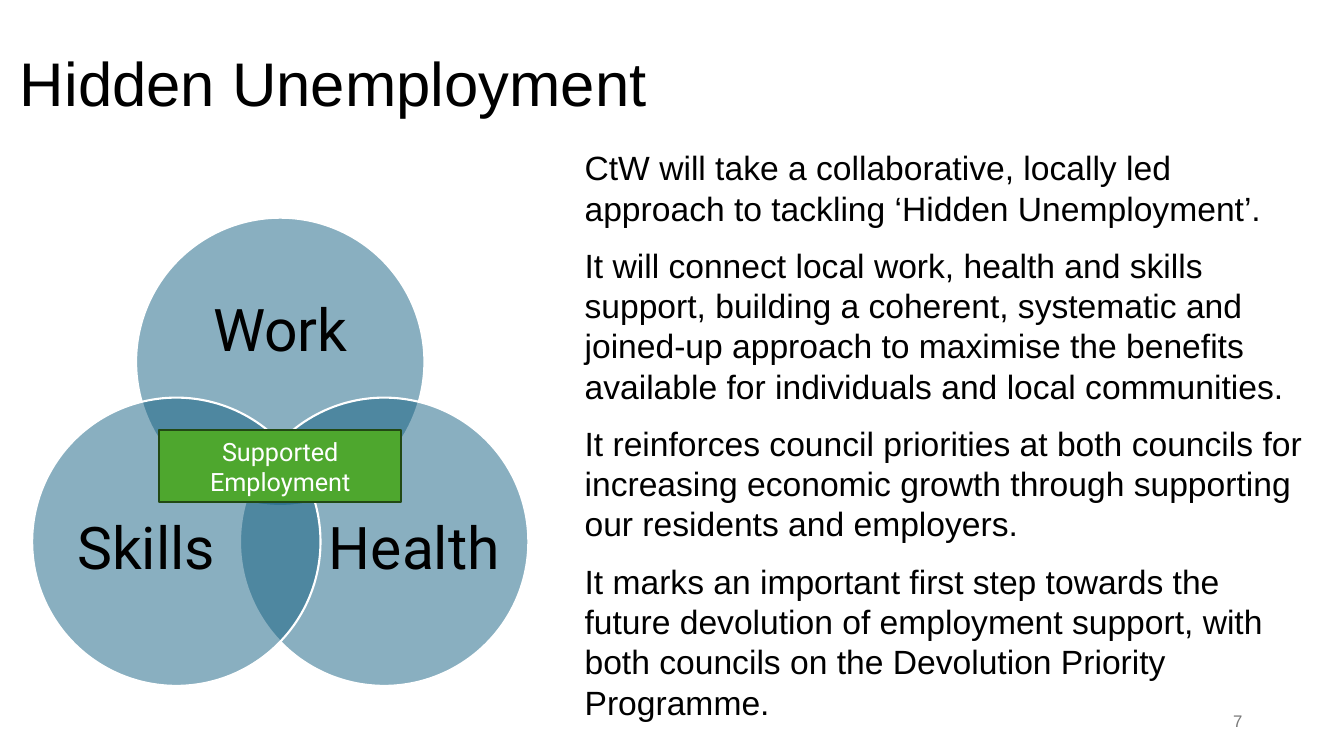
from dataclasses import dataclass
from math import cos, radians, sin

from lxml import etree
from pptx import Presentation
from pptx.dml.color import RGBColor
from pptx.enum.shapes import MSO_SHAPE
from pptx.enum.text import MSO_ANCHOR, PP_ALIGN
from pptx.oxml.ns import qn
from pptx.util import Emu, Inches, Pt

OVAL, RECTANGLE = MSO_SHAPE.OVAL, MSO_SHAPE.RECTANGLE
TOP, MIDDLE = MSO_ANCHOR.TOP, MSO_ANCHOR.MIDDLE
LEFT, CENTER, RIGHT = PP_ALIGN.LEFT, PP_ALIGN.CENTER, PP_ALIGN.RIGHT

# Square grid: ten cells to the inch
SLIDE_WIDTH, SLIDE_HEIGHT = Inches(13.33), Inches(7.5)
ROWS = 75
CELL = SLIDE_HEIGHT / ROWS

BLACK, WHITE, GREY = "000000", "FFFFFF", "797979"
TEAL, GREEN, DARK_GREEN = "156082", "4EA72E", "224914"

# Venn diagram, in grid cells
VENN_COLUMN, VENN_ROW = 27.8, 47.8
ORBIT, DIAMETER = 11.9, 28.6


@dataclass(frozen=True)
class Area:
    column: float
    row: float
    columns: float
    rows: float

    def lengths(self) -> list[Emu]:
        return [Emu(round(n * CELL)) for n in (self.column, self.row, self.columns, self.rows)]


@dataclass(frozen=True)
class TextStyle:
    size: float
    font: str = "Arial"
    color: str = BLACK
    align: PP_ALIGN = LEFT
    anchor: MSO_ANCHOR = MIDDLE
    line_spacing: float = 1.0
    before: float = 0
    after: float = 0
    inset: bool = True


@dataclass(frozen=True)
class Circle:
    label: str
    angle: float
    label_shift: tuple[float, float]
    label_size: tuple[float, float]


TITLE = TextStyle(44, line_spacing=0.9)
BODY = TextStyle(24, anchor=TOP, before=6, after=6)
CIRCLE_LABEL = TextStyle(42, "Roboto", align=CENTER, line_spacing=0.9, inset=False)
BADGE = TextStyle(18, "Roboto", WHITE, CENTER)
PAGE_NUMBER = TextStyle(12, color=GREY, align=RIGHT)

CIRCLES = [
    Circle("Work", -90, (0, -2.9), (20.9, 12.8)),
    Circle("Health", 30, (3, 0.9), (17.1, 15.7)),
    Circle("Skills", 150, (-3, 0.9), (17.1, 15.7)),
]

PARAGRAPHS = [
    "CtW will take a collaborative, locally led approach to tackling ‘Hidden Unemployment’.",
    "It will connect local work, health and skills support, building a coherent, systematic "
    "and joined-up approach to maximise the benefits available for individuals and local "
    "communities.",
    "It reinforces council priorities at both councils for increasing economic growth through "
    "supporting our residents and employers.",
    "It marks an important first step towards the future devolution of employment support, "
    "with both councils on the Devolution Priority Programme.",
]


def rgb(color: str) -> RGBColor:
    return RGBColor.from_string(color)


def centred(column: float, row: float, columns: float, rows: float) -> Area:
    return Area(column - columns / 2, row - rows / 2, columns, rows)


def write(box, texts: list[str], style: TextStyle) -> None:
    frame = box.text_frame
    frame.word_wrap = True
    frame.vertical_anchor = style.anchor
    if not style.inset:
        frame.margin_left = frame.margin_right = frame.margin_top = frame.margin_bottom = 0
    for index, text in enumerate(texts):
        para = frame.add_paragraph() if index else frame.paragraphs[0]
        para.alignment = style.align
        para.line_spacing = style.line_spacing
        para.space_before, para.space_after = Pt(style.before), Pt(style.after)
        span = para.add_run()
        span.text = text
        span.font.name, span.font.size = style.font, Pt(style.size)
        span.font.color.rgb = rgb(style.color)


def add_text(page, area: Area, texts: list[str], style: TextStyle) -> None:
    write(page.shapes.add_textbox(*area.lengths()), texts, style)


def add_figure(page, kind: MSO_SHAPE, area: Area, fill: str, line: str, opacity: int = 100):
    figure = page.shapes.add_shape(kind, *area.lengths())
    figure.shadow.inherit = False
    figure.fill.solid()
    figure.fill.fore_color.rgb = rgb(fill)
    figure.line.color.rgb = rgb(line)
    figure.line.width = Pt(1.5)
    if opacity < 100:
        tint = figure.fill._xPr.find(qn("a:solidFill"))[0]
        etree.SubElement(tint, qn("a:alpha")).set("val", str(opacity * 1000))
    return figure


def add_circle(page, circle: Circle) -> None:
    column = VENN_COLUMN + ORBIT * cos(radians(circle.angle))
    row = VENN_ROW + ORBIT * sin(radians(circle.angle))
    add_figure(page, OVAL, centred(column, row, DIAMETER, DIAMETER), TEAL, WHITE, 50)
    across, down = circle.label_shift
    label_area = centred(column + across, row + down, *circle.label_size)
    add_text(page, label_area, [circle.label], CIRCLE_LABEL)


def main() -> None:
    deck = Presentation()
    deck.slide_width, deck.slide_height = SLIDE_WIDTH, SLIDE_HEIGHT
    page = deck.slides.add_slide(deck.slide_layouts[6])

    # Title
    add_text(page, Area(1, 1.3, 115, 14.5), ["Hidden Unemployment"], TITLE)

    # Venn diagram
    for circle in CIRCLES:
        add_circle(page, circle)

    # Explanation
    add_text(page, Area(57, 14.1, 73.2, 59.5), PARAGRAPHS, BODY)

    # Badge over the overlap
    badge = add_figure(page, RECTANGLE, centred(VENN_COLUMN, 46.25, 24, 7.1), GREEN, DARK_GREEN)
    write(badge, ["Supported Employment"], BADGE)

    # Page number
    add_text(page, Area(113.7, 69.5, 10.5, 4), ["7"], PAGE_NUMBER)

    deck.save("out.pptx")


if __name__ == "__main__":
    main()
